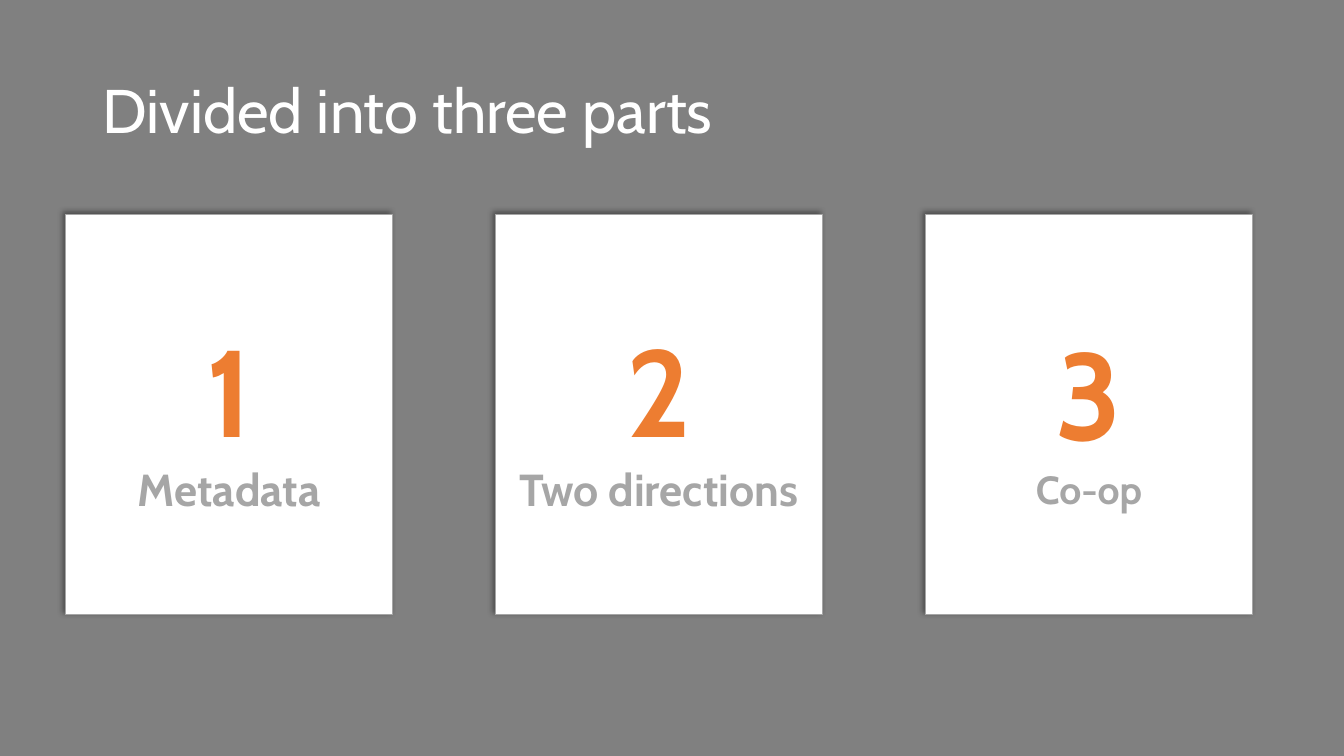
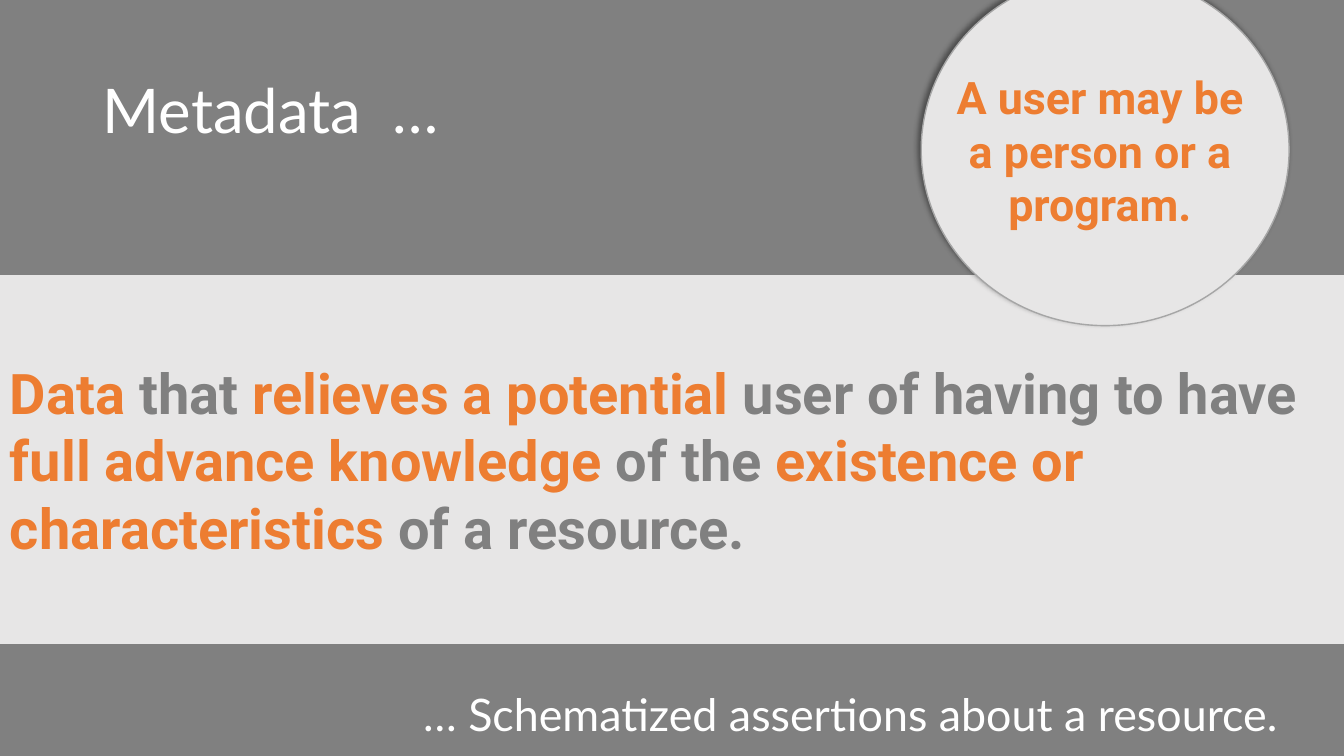
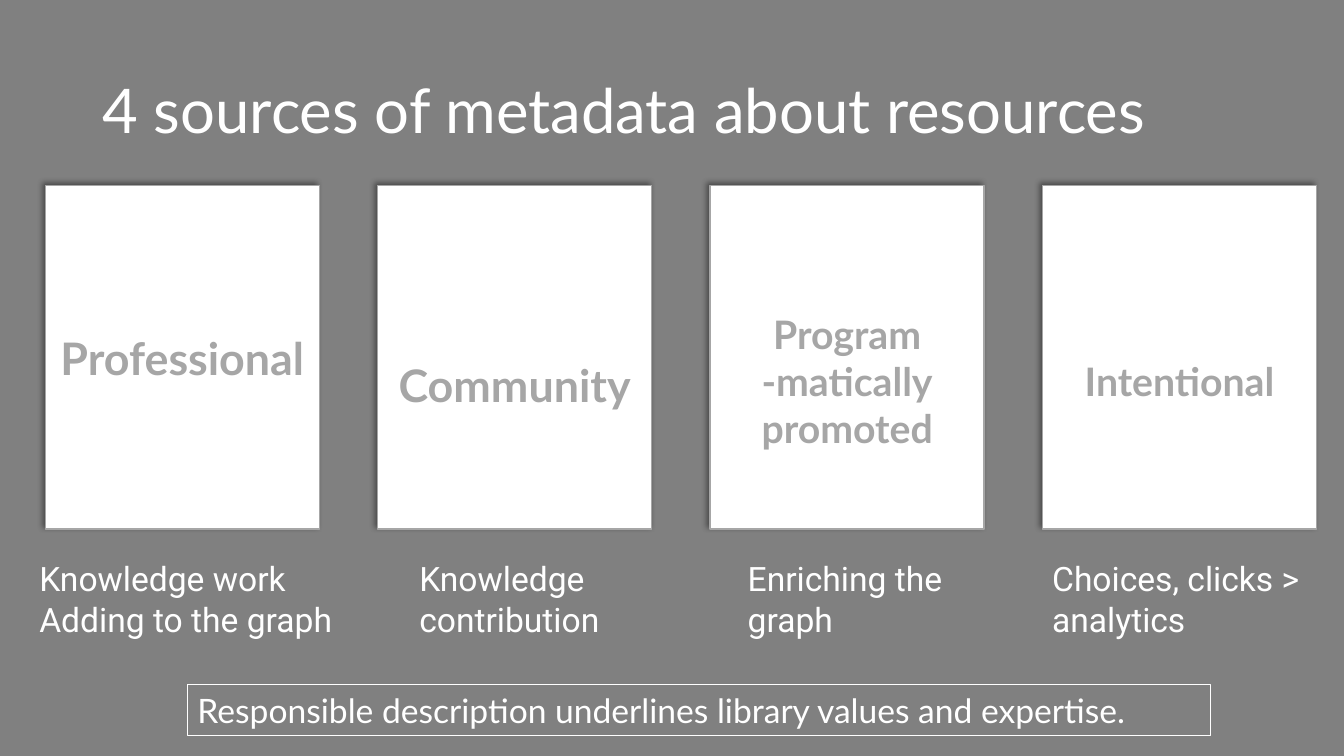
from dataclasses import dataclass

from pptx import Presentation
from pptx.dml.color import RGBColor
from pptx.enum.shapes import MSO_SHAPE as Preset
from pptx.enum.text import MSO_ANCHOR as Anchor, MSO_AUTO_SIZE as AutoSize, PP_ALIGN as Align
from pptx.oxml import parse_xml
from pptx.oxml.ns import nsdecls, qn
from pptx.util import Pt


@dataclass(frozen=True)
class Theme:
    white: str = "FFFFFF"
    background: str = "808080"
    panel: str = "E7E6E6"
    muted: str = "A6A6A6"
    accent: str = "ED7D31"
    title_size: int = 44
    number_size: int = 88
    statement_size: int = 40
    label_size: int = 32
    small_label_size: int = 28
    caption_size: int = 24


THEME = Theme()
SLIDE_WIDTH, SLIDE_HEIGHT = 960, 540
TITLE_BOX = (66, 29, 828, 104.4)

NUMBER = dict(name="Cabin", size=THEME.number_size, color=THEME.accent, bold=True)
PART_LABEL = dict(NUMBER, size=THEME.label_size, color=THEME.muted)
SMALL_PART_LABEL = dict(PART_LABEL, size=THEME.small_label_size)
SOURCE_LABEL = dict(PART_LABEL, name="Lato")
SMALL_SOURCE_LABEL = dict(SOURCE_LABEL, size=THEME.small_label_size)
KEY_WORDS = dict(name="Roboto", size=THEME.statement_size, color=THEME.accent, bold=True)
LINKING_WORDS = dict(KEY_WORDS, color=THEME.background)
CALLOUT = dict(KEY_WORDS, size=THEME.label_size)
CAPTION = dict(name="Roboto", size=THEME.caption_size, color=THEME.white)
CONCLUSION = dict(CAPTION, name="Lato")
REMARK = dict(CONCLUSION, size=THEME.label_size)


def color(value):
    return RGBColor.from_string(value)


def format_run(run, style):
    values = dict(style)
    run.font.color.rgb = color(values.pop("color"))
    values["size"] = Pt(values["size"])
    for name, value in values.items():
        setattr(run.font, name, value)


def write(shape, paragraphs, align=Align.LEFT, anchor=Anchor.TOP, line_spacing=None, margin_top=3.6):
    """Fill a shape with paragraphs, each a list of (text, style) runs."""
    frame = shape.text_frame
    frame_values = dict(word_wrap=True, auto_size=AutoSize.NONE, vertical_anchor=anchor,
                        margin_top=Pt(margin_top))
    for name, value in frame_values.items():
        setattr(frame, name, value)
    for index, runs in enumerate(paragraphs):
        paragraph = frame.add_paragraph() if index else frame.paragraphs[0]
        paragraph.alignment = align
        if line_spacing:
            paragraph.line_spacing = line_spacing
        for text, style in runs:
            for line_index, line in enumerate(text.split("\n")):
                if line_index:
                    paragraph.add_line_break()
                run = paragraph.add_run()
                run.text = line
                format_run(run, style)


def add_title_slide(presentation, text, font):
    slide = presentation.slides.add_slide(presentation.slide_layouts[5])
    title = slide.shapes.title
    for name, value in zip(("left", "top", "width", "height"), TITLE_BOX):
        setattr(title, name, Pt(value))
    style = dict(name=font, size=THEME.title_size, color=THEME.white)
    write(title, [[(text, style)]], anchor=Anchor.MIDDLE, line_spacing=0.9)
    return slide


def add_text(slide, box, paragraphs, **layout):
    write(slide.shapes.add_textbox(*map(Pt, box)), paragraphs, **layout)


def add_panel(slide, preset, box, fill=None, line=None, line_width=1):
    shape = slide.shapes.add_shape(preset, *map(Pt, box))
    shape.shadow.inherit = False
    if fill:
        shape.fill.solid()
        shape.fill.fore_color.rgb = color(fill)
    else:
        shape.fill.background()
    if line:
        shape.line.color.rgb = color(line)
        shape.line.width = Pt(line_width)
    else:
        shape.line.fill.background()
    return shape


def add_raised_panel(slide, preset, box, fill):
    """Add a grey-edged panel with a shadow towards the upper left."""
    shape = add_panel(slide, preset, box, fill, THEME.muted)
    effects = shape._element.spPr.find(qn("a:effectLst"))
    effects.append(parse_xml(
        f'<a:outerShdw {nsdecls("a")} blurRad="{Pt(4)}" dist="{Pt(3)}" dir="{225 * 60000}"'
        ' algn="br" rotWithShape="0"><a:srgbClr val="000000"><a:alpha val="40000"/>'
        '</a:srgbClr></a:outerShdw>'))
    return shape


def add_cards(slide, first_box, pitch, cards):
    """Add a row of cards, each given as (paragraphs, top margin)."""
    left, top, width, height = first_box
    for index, (paragraphs, margin_top) in enumerate(cards):
        box = (left + index * pitch, top, width, height)
        card = add_raised_panel(slide, Preset.RECTANGLE, box, THEME.white)
        write(card, paragraphs, Align.CENTER, Anchor.MIDDLE, margin_top=margin_top)


def build_parts(presentation):
    slide = add_title_slide(presentation, "Divided into three parts", "Cabin")
    labels = [("Metadata", PART_LABEL), ("Two directions", PART_LABEL), ("Co-op", SMALL_PART_LABEL)]
    cards = [([[(str(number), NUMBER)], [label]], 3.6) for number, label in enumerate(labels, 1)]
    add_cards(slide, (47, 153.4, 233.3, 285.8), 307.1, cards)


def build_definition(presentation):
    slide = add_title_slide(presentation, "Metadata  …", "Lato")
    band = add_panel(slide, Preset.RECTANGLE, (0, 196.5, SLIDE_WIDTH, 263.5), THEME.panel)
    write(band, [[
        ("Data", KEY_WORDS),
        (" that ", LINKING_WORDS),
        ("relieves a potential ", KEY_WORDS),
        ("user of having to have ", LINKING_WORDS),
        ("full advance knowledge ", KEY_WORDS),
        ("of the ", LINKING_WORDS),
        ("existence or characteristics", KEY_WORDS),
        (" of a resource.", LINKING_WORDS),
    ]], anchor=Anchor.MIDDLE)
    add_raised_panel(slide, Preset.OVAL, (658, -18.7, 262.8, 251.3), THEME.panel)
    add_text(slide, (667, 18, 237.6, 178.6), [[("A user may be\na person or a program.", CALLOUT)]],
             align=Align.CENTER, anchor=Anchor.MIDDLE)
    add_text(slide, (295.2, 486.7, 660, 46), [[("… Schematized assertions about a resource.", REMARK)]])


def build_sources(presentation):
    slide = add_title_slide(presentation, "4 sources of metadata about resources", "Lato")
    add_cards(slide, (32.4, 132.5, 195.8, 245.5), 237.4, [
        ([[("Professional", SOURCE_LABEL)]], 3.6),
        ([[("Community", SOURCE_LABEL)]], 42),
        ([[("Program\n-matically\npromoted", SMALL_SOURCE_LABEL)]], 37.2),
        ([[("Intentional", SMALL_SOURCE_LABEL)]], 37.2),
    ])
    captions = [
        (21, 240, ["Knowledge work", "Adding to the graph"]),
        (292.4, 151, ["Knowledge\ncontribution"]),
        (527, 167, ["Enriching the\ngraph"]),
        (744.5, 197, ["Choices, clicks >\nanalytics"]),
    ]
    for left, width, lines in captions:
        add_text(slide, (left, 395.2, width, 66), [[(line, CAPTION)] for line in lines])
    conclusion = add_panel(slide, Preset.RECTANGLE, (134, 489, 731, 36.3),
                           line=THEME.white, line_width=0.75)
    write(conclusion, [[("Responsible description underlines library values and expertise.", CONCLUSION)]])


def main():
    presentation = Presentation()
    presentation.slide_width, presentation.slide_height = Pt(SLIDE_WIDTH), Pt(SLIDE_HEIGHT)
    background = presentation.slide_master.background.fill
    background.solid()
    background.fore_color.rgb = color(THEME.background)
    build_parts(presentation)
    build_definition(presentation)
    build_sources(presentation)
    presentation.save("out.pptx")


if __name__ == "__main__":
    main()
